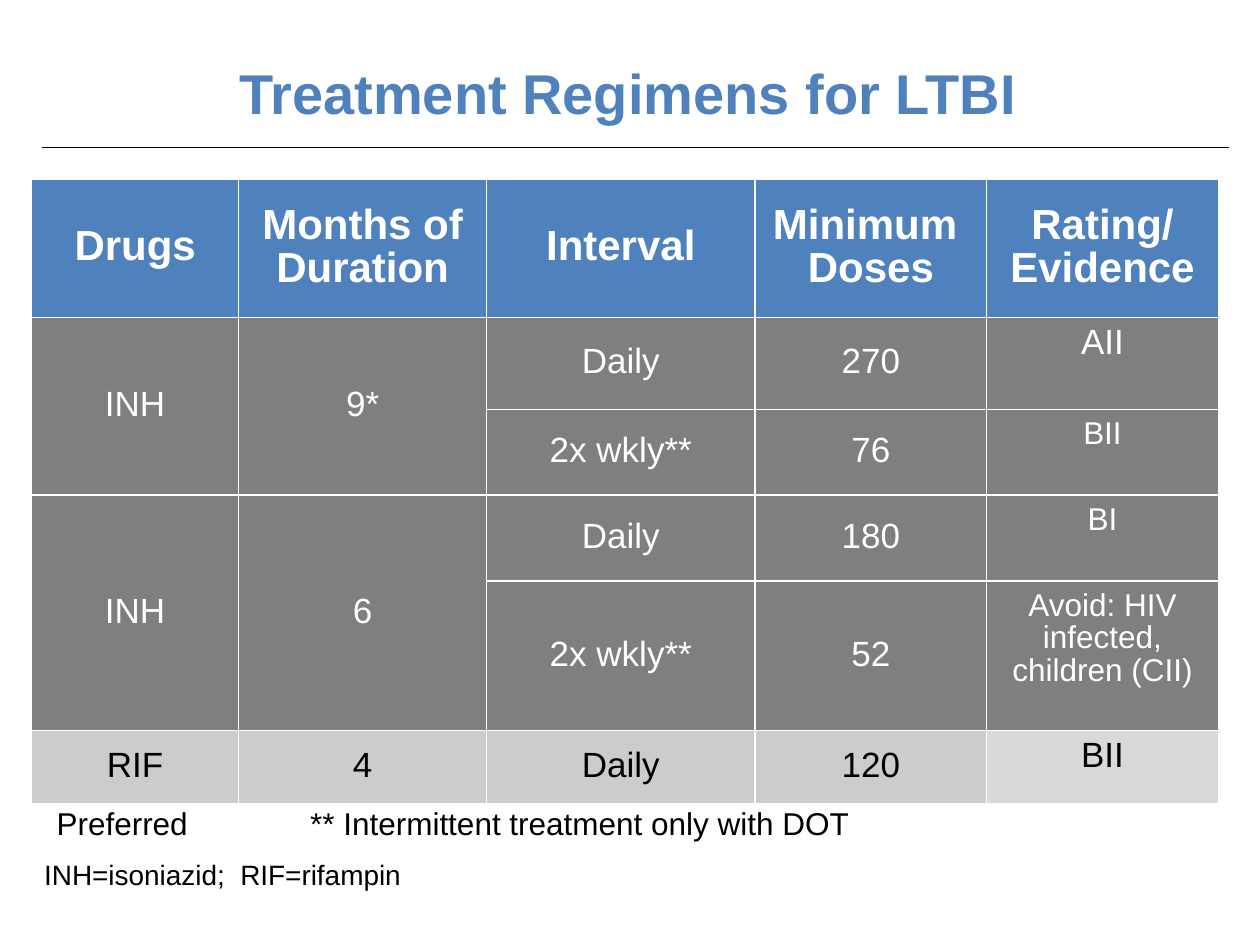
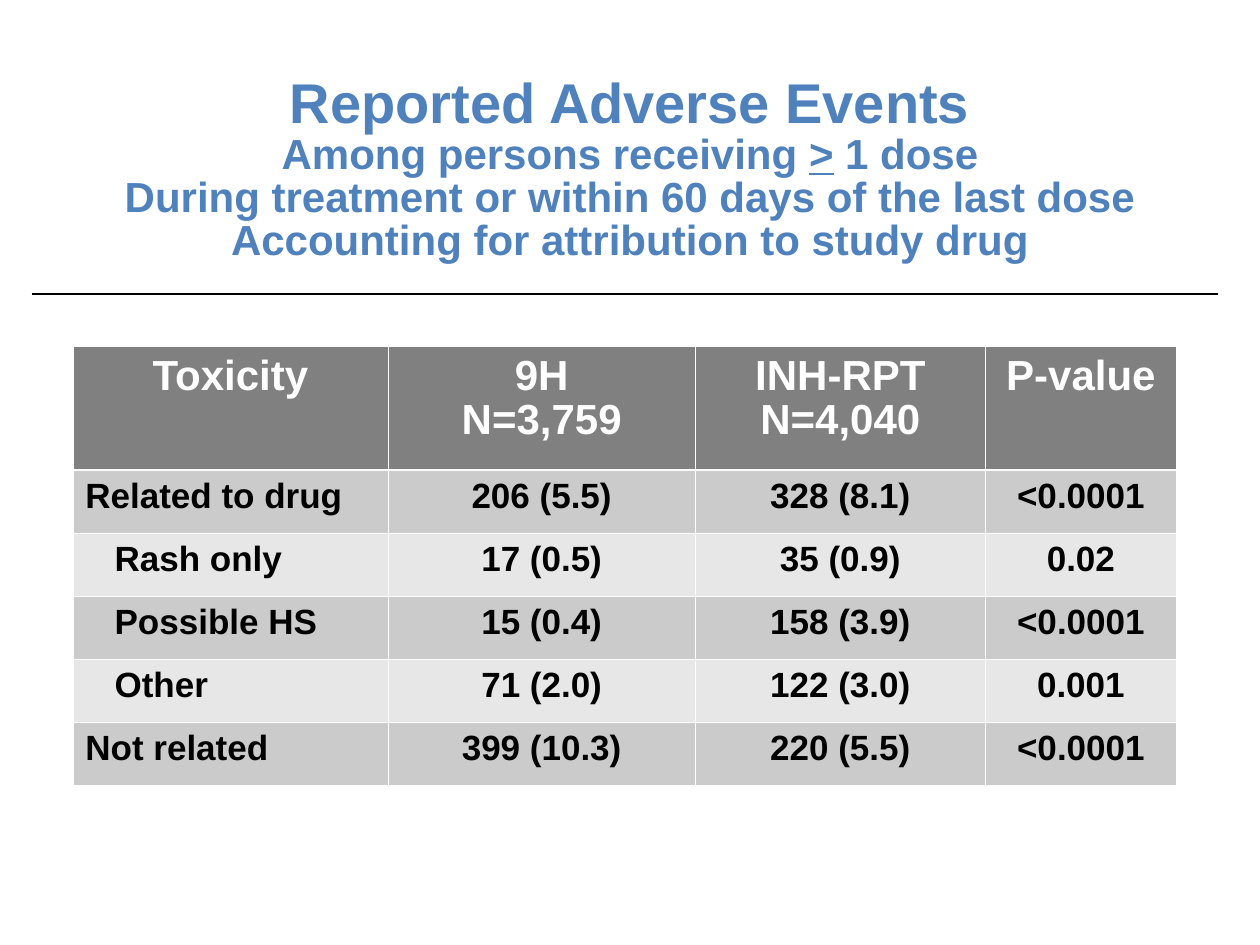
"""Builds two slides on tuberculosis treatment: regimens and adverse events."""
import dataclasses

import lxml.etree
import pptx
import pptx.dml.color
import pptx.enum.shapes
import pptx.enum.text
import pptx.oxml.ns
import pptx.util

Cm = pptx.util.Cm
Pt = pptx.util.Pt
Align = pptx.enum.text.PP_ALIGN
Anchor = pptx.enum.text.MSO_ANCHOR
rgb = pptx.dml.color.RGBColor.from_string
qn = pptx.oxml.ns.qn


@dataclasses.dataclass(frozen=True)
class Theme:
    font: str = "Arial"
    blue: str = "4F81BD"
    white: str = "FFFFFF"
    black: str = "000000"
    regimen_gray: str = "7F7F7F"
    rifampin_gray: str = "CCCCCC"
    rating_gray: str = "D9D9D9"
    header_gray: str = "808080"
    dark_band: str = "CBCBCB"
    light_band: str = "E7E7E7"
    title: int = 32
    heading: int = 24
    body: int = 20
    small: int = 18
    note: int = 16


theme = Theme()


def format_para(para, size, color, bold=False, spacing=0.9, align=Align.CENTER):
    para.alignment = align
    para.line_spacing = spacing
    for span in para.runs:
        span.font.name = theme.font
        span.font.size = Pt(size)
        span.font.bold = bold
        span.font.color.rgb = rgb(color)


def add_grid(page, left, top, widths, heights, border, header_border):
    frame = page.shapes.add_table(len(heights), len(widths), Cm(left), Cm(top),
                                  Cm(sum(widths)), Cm(sum(heights)))
    grid = frame.table
    grid.first_row = grid.horz_banding = False
    for column, width in zip(grid.columns, widths):
        column.width = Cm(width)
    for r, height in enumerate(heights):
        grid.rows[r].height = Cm(height)
        for cell in grid.rows[r].cells:
            properties = cell._tc.get_or_add_tcPr()
            for side in ("lnL", "lnR", "lnT", "lnB"):
                under_header = (r, side) in ((0, "lnB"), (1, "lnT"))
                weight = Pt(header_border if under_header else border)
                line = lxml.etree.SubElement(properties, qn(f"a:{side}"), w=str(int(weight)))
                fill = lxml.etree.SubElement(line, qn("a:solidFill"))
                lxml.etree.SubElement(fill, qn("a:srgbClr"), val=theme.white)
            cell.margin_left = cell.margin_right = Cm(0.25)
            cell.margin_top = cell.margin_bottom = Cm(0.13)
            cell.fill.solid()
            cell.fill.fore_color.rgb = rgb(theme.white)
    return grid


deck = pptx.Presentation()
deck.slide_width = Cm(25.4)
deck.slide_height = Cm(19.05)

headings = [
    {"place": (0.84, 1.24, 23.65, 1.3), "anchor": Anchor.BOTTOM, "insets": (0, 0, 0),
     "lines": [["Treatment Regimens for LTBI"]],
     "rule": (0.84, 24.77, 2.97), "weight": 0.75},
    {"place": (1.27, 1.93, 22.86, 3.86), "anchor": Anchor.MIDDLE, "insets": (0.25, 0.13, 0.96),
     "lines": [["Reported Adverse Events"],
               ["Among persons receiving ", ">", " 1 dose"],
               ["During treatment or within 60 days of the last dose"],
               ["Accounting for attribution to study drug"]],
     "rule": (0.64, 24.56, 5.92), "weight": 1},
]
pages = []
for heading in headings:
    page = deck.slides.add_slide(deck.slide_layouts[6])
    pages.append(page)
    box = page.shapes.add_textbox(*map(Cm, heading["place"]))
    text = box.text_frame
    text.word_wrap = True
    text.vertical_anchor = heading["anchor"]
    side, upper, lower = map(Cm, heading["insets"])
    text.margin_left = text.margin_right = side
    text.margin_top, text.margin_bottom = upper, lower
    para = text.paragraphs[0]
    for number, pieces in enumerate(heading["lines"]):
        if number:
            para.add_line_break()
        for piece in pieces:
            para.add_run().text = piece
    format_para(para, theme.heading, theme.blue, bold=True, spacing=0.85)
    para.runs[0].font.size = Pt(theme.title)
    for span in para.runs:
        if span.text == ">":
            span.font.underline = True

    start, end, height = map(Cm, heading["rule"])
    rule = page.shapes.add_connector(pptx.enum.shapes.MSO_CONNECTOR.STRAIGHT,
                                     start, height, end, height)
    rule.line.color.rgb = rgb(theme.black)
    rule.line.width = Pt(heading["weight"])
    lxml.etree.SubElement(rule._element.spPr, qn("a:effectLst"))

regimen_rows = [
    ["Drugs", "Months of Duration", "Interval", "Minimum \vDoses", "Rating/\nEvidence"],
    ["INH", "9*", "Daily", "270", "AII"],
    ["", "", "2x wkly**", "76", "BII"],
    ["INH", "6", "Daily", "180", "BI"],
    ["", "", "2x wkly**", "52", "Avoid: HIV infected, children (CII)"],
    ["RIF", "4", "Daily", "120", "BII"],
]
regimens = add_grid(pages[0], 0.64, 3.61, [4.17, 5, 5.41, 4.67, 4.67],
                    [2.79, 1.85, 1.73, 1.73, 3.02, 1.47, 2.46], 1, 1)
for r, row in enumerate(regimen_rows):
    for c, words in enumerate(row):
        cell = regimens.cell(r, c)
        is_header, is_rifampin, is_rating = r == 0, r == 5, c == 4
        shade = theme.blue if is_header else theme.regimen_gray
        if is_rifampin:
            shade = theme.rating_gray if is_rating else theme.rifampin_gray
        cell.fill.fore_color.rgb = rgb(shade)
        cell.vertical_anchor = Anchor.MIDDLE
        size = theme.heading if is_header else theme.body
        if is_rating and not is_header:
            cell.vertical_anchor = Anchor.TOP
            cell.margin_top = Cm(0.18)
            if r in (2, 3, 4):
                size = theme.small
        cell.text_frame.text = words
        for para in cell.text_frame.paragraphs:
            format_para(para, size, theme.black if is_rifampin else theme.white, is_header,
                        spacing=0.93 if size == theme.small else 0.9)
for r in (1, 3):
    for c in (0, 1):
        regimens.cell(r, c).merge(regimens.cell(r + 1, c))

notes = regimens.cell(6, 0)
notes.merge(regimens.cell(6, 3))
notes.text_frame.text = ("\tPreferred\t** Intermittent treatment only with DOT\n"
                         "INH=isoniazid;  RIF=rifampin")
footnote, abbreviations = notes.text_frame.paragraphs
format_para(footnote, theme.small, theme.black, align=Align.LEFT)
format_para(abbreviations, theme.note, theme.black, align=Align.LEFT)
abbreviations.space_before = Pt(12)
stops = lxml.etree.SubElement(footnote._p.get_or_add_pPr(), qn("a:tabLst"))
for stop in (0.25, 5.36):
    lxml.etree.SubElement(stops, qn("a:tab"), pos=str(int(Cm(stop))), algn="l")

event_rows = [
    ["Toxicity", "9H\nN=3,759", "INH-RPT\nN=4,040", "P-value"],
    ["Related to drug", "206 (5.5)", "328 (8.1)", "<0.0001"],
    ["Rash only", "17 (0.5)", "35 (0.9)", "0.02"],
    ["Possible HS", "15 (0.4)", "158 (3.9)", "<0.0001"],
    ["Other", "71 (2.0)", "122 (3.0)", "0.001"],
    ["Not related", "399 (10.3)", "220 (5.5)", "<0.0001"],
]
events = add_grid(pages[1], 1.47, 6.99, [6.35, 6.2, 5.84, 3.86],
                  [2.49] + [1.27] * 5, 0.45, 1.47)
for r, row in enumerate(event_rows):
    for c, words in enumerate(row):
        cell = events.cell(r, c)
        is_header = r == 0
        band = theme.dark_band if r % 2 else theme.light_band
        cell.fill.fore_color.rgb = rgb(theme.header_gray if is_header else band)
        cell.margin_top = Cm(0.18)
        if c == 0 and r in (2, 3, 4):
            cell.margin_left = Cm(0.84)
        cell.text_frame.text = words
        for para in cell.text_frame.paragraphs:
            format_para(para, theme.heading if is_header else theme.body,
                        theme.white if is_header else theme.black, bold=True, spacing=0.93,
                        align=Align.LEFT if c == 0 and not is_header else Align.CENTER)

deck.save("out.pptx")
